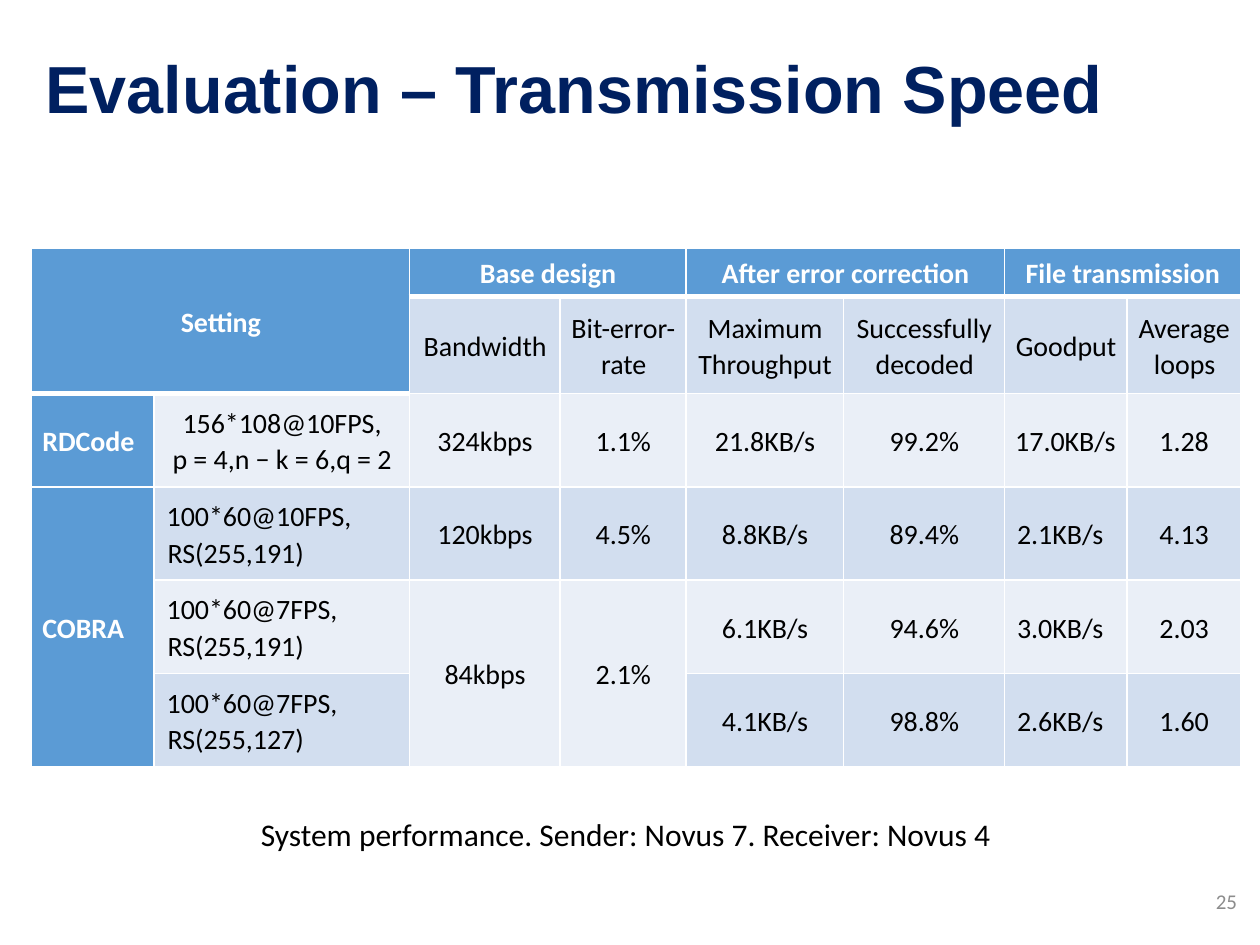
from dataclasses import dataclass

from lxml import etree
from pptx import Presentation
from pptx.dml.color import RGBColor
from pptx.enum.text import MSO_ANCHOR, PP_ALIGN
from pptx.oxml.ns import qn
from pptx.util import Pt

LEFT, CENTER, RIGHT = PP_ALIGN.LEFT, PP_ALIGN.CENTER, PP_ALIGN.RIGHT
TOP, MIDDLE = MSO_ANCHOR.TOP, MSO_ANCHOR.MIDDLE


@dataclass(frozen=True)
class Theme:
    title_font: str = "Arial"
    body_font: str = "Calibri"
    navy: str = "002060"
    blue: str = "5B9BD5"
    band_dark: str = "D2DEEF"
    band_light: str = "EAEFF7"
    white: str = "FFFFFF"
    black: str = "000000"
    grey: str = "8C8C8C"
    title_size: int = 38
    caption_size: int = 18
    table_size: int = 16
    number_size: int = 12


THEME = Theme()

COL_WIDTHS = [70, 146, 86, 72, 90, 92, 70, 65]
ROW_HEIGHTS = [27.5, 55.5] + [53.3] * 4
# None marks a cell covered by a merged neighbour.
ROWS = [
    ["Setting", None, "Base design", None, "After error correction", None,
     "File transmission", None],
    [None, None, "Bandwidth", "Bit-error-rate", "Maximum\nThroughput",
     "Successfully decoded", "Goodput", "Average loops"],
    ["RDCode", "156*108@10FPS,\np = 4,n − k = 6,q = 2", "324kbps", "1.1%",
     "21.8KB/s", "99.2%", "17.0KB/s", "1.28"],
    ["COBRA", "100*60@10FPS, RS(255,191)", "120kbps", "4.5%",
     "8.8KB/s", "89.4%", "2.1KB/s", "4.13"],
    [None, "100*60@7FPS, RS(255,191)", "84kbps", "2.1%",
     "6.1KB/s", "94.6%", "3.0KB/s", "2.03"],
    [None, "100*60@7FPS, RS(255,127)", None, None,
     "4.1KB/s", "98.8%", "2.6KB/s", "1.60"],
]
# First and last (row, column) of each merged block.
MERGES = [((0, 0), (1, 1)), ((0, 2), (0, 3)), ((0, 4), (0, 5)),
          ((0, 6), (0, 7)), ((3, 0), (5, 0)), ((4, 2), (5, 2)),
          ((4, 3), (5, 3))]


def style_font(font, name, size, color, bold=False):
    font.name = name
    font.size = Pt(size)
    font.bold = bold
    font.color.rgb = RGBColor.from_string(color)


def add_text(s, box, text, font, align=LEFT, anchor=MIDDLE, wrap=True, spacing=None):
    """Add a one-line text box; font holds the arguments of style_font."""
    tf = s.shapes.add_textbox(*(Pt(v) for v in box)).text_frame
    tf.word_wrap = wrap
    tf.vertical_anchor = anchor
    p = tf.paragraphs[0]
    p.text = text
    p.alignment = align
    p.line_spacing = spacing
    style_font(p.font, *font)


def set_borders(cell, top, bottom):
    tc_pr = cell._tc.get_or_add_tcPr()
    sides = (("lnL", 1), ("lnR", 1), ("lnT", top), ("lnB", bottom))
    for i, (tag, width) in enumerate(sides):
        ln = etree.Element(qn(f"a:{tag}"), w=str(int(Pt(width))))
        fill = etree.SubElement(ln, qn("a:solidFill"))
        etree.SubElement(fill, qn("a:srgbClr"), val=THEME.white)
        tc_pr.insert(i, ln)


def fill_cell(cell, r, c):
    """Style and fill one cell by its place in the grid."""
    header_rows = 2 if c < 2 else 1
    is_header = r < header_rows or c == 0
    band = THEME.band_dark if r % 2 else THEME.band_light
    cell.fill.solid()
    cell.fill.fore_color.rgb = RGBColor.from_string(THEME.blue if is_header else band)
    set_borders(cell, top=3 if r == header_rows else 1,
                bottom=3 if r < header_rows else 1)
    if ROWS[r][c] is None:
        return
    cell.vertical_anchor = MIDDLE
    cell.margin_left = cell.margin_right = Pt(5.75)
    cell.margin_top, cell.margin_bottom = Pt(0.7), Pt(0)
    cell.text_frame.text = ROWS[r][c]
    is_left = r >= 2 and c in (0, 6) or r >= 3 and c == 1
    indent = 2 if is_left and r >= 3 and c > 0 else 1
    for p in cell.text_frame.paragraphs:
        p_pr = p._p.get_or_add_pPr()
        p_pr.set("marL", str(int(Pt(indent))))
        p_pr.set("indent", str(int(Pt(-0.5))))
        p.alignment = LEFT if is_left else CENTER
        p.line_spacing = 1.07
        style_font(p.font, THEME.body_font, THEME.table_size,
                   THEME.white if is_header else THEME.black, is_header)


def add_results_table(s, left, top):
    frame = s.shapes.add_table(len(ROWS), len(COL_WIDTHS), Pt(left), Pt(top),
                               Pt(sum(COL_WIDTHS)), Pt(sum(ROW_HEIGHTS)))
    table = frame.table
    for col, width in zip(table.columns, COL_WIDTHS):
        col.width = Pt(width)
    for row, height in zip(table.rows, ROW_HEIGHTS):
        row.height = Pt(height)
    for first, last in MERGES:
        table.cell(*first).merge(table.cell(*last))
    for r in range(len(ROWS)):
        for c in range(len(COL_WIDTHS)):
            fill_cell(table.cell(r, c), r, c)


def main():
    prs = Presentation()
    prs.slide_width, prs.slide_height = Pt(720), Pt(540)
    s = prs.slides.add_slide(prs.slide_layouts[6])
    add_text(s, (19, 8.5, 679, 88.5), "Evaluation – Transmission Speed",
             (THEME.title_font, THEME.title_size, THEME.navy, True), spacing=0.9)
    add_results_table(s, 18, 142)
    add_text(s, (142, 462, 435.5, 29),
             "System performance. Sender: Novus 7. Receiver: Novus 4",
             (THEME.body_font, THEME.caption_size, THEME.black),
             anchor=TOP, wrap=False)
    add_text(s, (552, 500.5, 162, 29), "25",
             (THEME.body_font, THEME.number_size, THEME.grey), align=RIGHT)
    prs.save("out.pptx")


if __name__ == "__main__":
    main()
